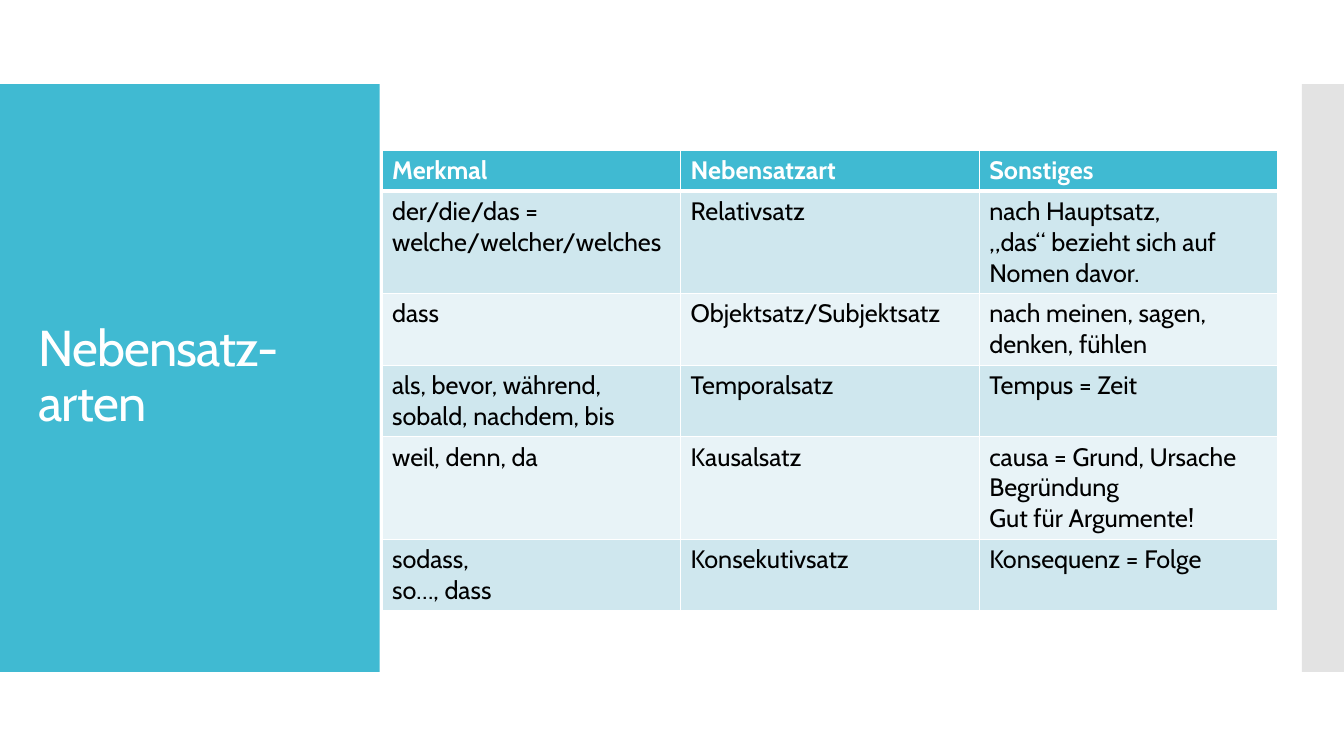
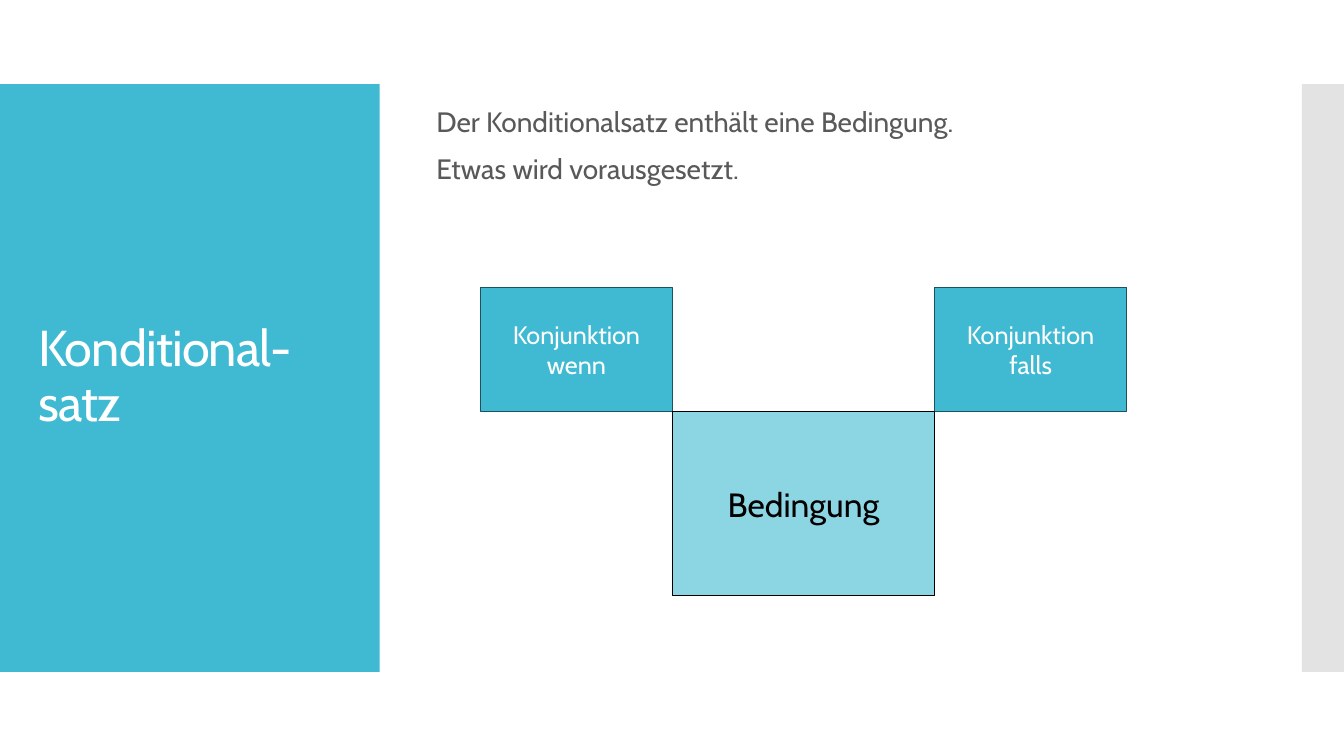
"""Build two German grammar slides: a table of clause types and a diagram of the conditional clause."""
from dataclasses import dataclass

from lxml import etree
from pptx import Presentation
from pptx.dml.color import RGBColor
from pptx.enum.shapes import MSO_SHAPE
from pptx.enum.text import MSO_ANCHOR, MSO_AUTO_SIZE, PP_ALIGN
from pptx.oxml.ns import qn
from pptx.util import Pt

RECT = MSO_SHAPE.RECTANGLE
MIDDLE, TOP = MSO_ANCHOR.MIDDLE, MSO_ANCHOR.TOP
NO_FIT = MSO_AUTO_SIZE.NONE
LEFT, CENTER = PP_ALIGN.LEFT, PP_ALIGN.CENTER

CLAUSE_TITLE = "Nebensatz-arten"
CLAUSE_ROWS = [
    ("Merkmal", "Nebensatzart", "Sonstiges"),
    ("der/die/das = welche/welcher/welches", "Relativsatz",
     "nach Hauptsatz,\n„das“ bezieht sich auf Nomen davor."),
    ("dass", "Objektsatz/Subjektsatz", "nach meinen, sagen, denken, fühlen"),
    ("als, bevor, während, sobald, nachdem, bis", "Temporalsatz", "Tempus = Zeit"),
    ("weil, denn, da", "Kausalsatz", "causa = Grund, Ursache\nBegründung\nGut für Argumente!"),
    ("sodass,\nso…, dass", "Konsekutivsatz", "Konsequenz = Folge"),
]
CONDITION_TITLE = "Konditional-satz"
CONDITION_INTRO = "Der Konditionalsatz enthält eine Bedingung.\nEtwas wird vorausgesetzt."
CONJUNCTIONS = ["Konjunktion\nwenn", "Konjunktion\nfalls"]
CONDITION = "Bedingung"


@dataclass(frozen=True)
class Theme:
    """Colours, font and type sizes of the deck."""
    font: str = "Cabin"
    accent: str = "40BAD2"
    accent_light: str = "8CD6E4"
    accent_dark: str = "1C525C"
    edge: str = "C8C8C8"
    band_odd: str = "CFE7EE"
    band_even: str = "E8F3F7"
    white: str = "FFFFFF"
    black: str = "000000"
    grey: str = "595959"
    title: int = 36
    condition: int = 24
    body: int = 20
    label: int = 18


T = Theme()
WIDTH, HEIGHT = 960, 540
BAND_TOP, BAND_HEIGHT = 60, 420
PANEL_WIDTH, EDGE_WIDTH = 271.2, 30
TITLE_BOX = (20.2, 88.6, 231.8, 362.2)
INTRO_BOX = (304.6, 60.5, 576, 88.6)
TABLE_LEFT, TABLE_TOP, COLUMN_WIDTH, ROW_HEIGHT = 272.9, 107.3, 213.3, 29.2
CONDITION_BOX = (480.2, 293.8, 187.6, 131.8)
CONJUNCTION_SIZE = (136.8, 88.6)


def rgb(color):
    """Turn a hex string into a colour."""
    return RGBColor.from_string(color)


def points(values):
    """Turn numbers into lengths."""
    return [Pt(v) for v in values]


def write(tf, text, size, color, bold=False, align=LEFT, anchor=MIDDLE, **spacing):
    """Fill a text frame and format all its paragraphs."""
    tf.text = text
    tf.word_wrap = True
    tf.vertical_anchor = anchor
    for i, p in enumerate(tf.paragraphs):
        p.alignment = align
        for name, value in spacing.items():
            if name != "space_before" or i:
                setattr(p, name, value)
        for r in p.runs:
            for name, value in {"name": T.font, "size": Pt(size), "bold": bold}.items():
                setattr(r.font, name, value)
            r.font.color.rgb = rgb(color)


def add_rect(s, box, fill, line=None):
    """Add a flat rectangle."""
    sp = s.shapes.add_shape(RECT, *points(box))
    sp.shadow.inherit = False
    sp.fill.solid()
    sp.fill.fore_color.rgb = rgb(fill)
    if line:
        sp.line.color.rgb = rgb(line)
        sp.line.width = Pt(0.85)
    else:
        sp.line.fill.background()
    return sp


def add_bands(layout, s):
    """Draw the two side bands and move them to the layout behind its placeholders."""
    panel = add_rect(s, (0, BAND_TOP, PANEL_WIDTH, BAND_HEIGHT), T.accent)
    edge = add_rect(s, (WIDTH - EDGE_WIDTH, BAND_TOP, EDGE_WIDTH, BAND_HEIGHT), T.edge)
    color = next(edge.element.iter(qn("a:srgbClr")))
    etree.SubElement(color, qn("a:alpha"), val="50000")
    for sp in (edge, panel):
        layout.shapes.element.insert(2, sp.element)


def add_slide(prs, layout, title):
    """Add a slide with its title on the left panel."""
    s = prs.slides.add_slide(layout)
    sp = s.shapes.title
    sp.left, sp.top, sp.width, sp.height = points(TITLE_BOX)
    tf = sp.text_frame
    write(tf, title, T.title, T.white, line_spacing=0.9)
    tf.auto_size = NO_FIT
    tf.paragraphs[0].runs[0].font._element.set("spc", "-60")
    return s


def set_borders(cell, widths):
    """Give a cell white borders, with widths by side."""
    tc_pr = cell._tc.get_or_add_tcPr()
    for side, width in widths.items():
        ln = etree.SubElement(tc_pr, qn(f"a:ln{side}"), w=str(Pt(width)))
        fill = etree.SubElement(ln, qn("a:solidFill"))
        etree.SubElement(fill, qn("a:srgbClr"), val=T.white)


def add_clause_table(s):
    """Add the table of clause types."""
    rows, cols = len(CLAUSE_ROWS), len(CLAUSE_ROWS[0])
    box = (TABLE_LEFT, TABLE_TOP, cols * COLUMN_WIDTH, rows * ROW_HEIGHT)
    table = s.shapes.add_table(rows, cols, *points(box)).table
    for i, row in enumerate(CLAUSE_ROWS):
        header = i == 0
        fill = T.accent if header else T.band_odd if i % 2 else T.band_even
        for j, text in enumerate(row):
            cell = table.cell(i, j)
            write(cell.text_frame, text, T.label, T.white if header else T.black,
                  bold=header, anchor=TOP)
            set_borders(cell, {"L": 1, "R": 1, "T": 3 if i == 1 else 1, "B": 3 if header else 1})
            cell.fill.solid()
            cell.fill.fore_color.rgb = rgb(fill)


def add_condition_diagram(s):
    """Add the condition with a conjunction at each upper corner."""
    left, top, width, _ = CONDITION_BOX
    w, h = CONJUNCTION_SIZE
    for x, text in zip((left - w, left + width), CONJUNCTIONS):
        sp = add_rect(s, (x, top - h, w, h), T.accent, T.accent_dark)
        write(sp.text_frame, text, T.label, T.white, align=CENTER)
    sp = add_rect(s, CONDITION_BOX, T.accent_light, T.black)
    write(sp.text_frame, CONDITION, T.condition, T.black, align=CENTER)


def main():
    """Build and save the deck."""
    prs = Presentation()
    prs.slide_width, prs.slide_height = points((WIDTH, HEIGHT))
    layout = prs.slide_layouts[5]

    s = add_slide(prs, layout, CLAUSE_TITLE)
    add_bands(layout, s)
    add_clause_table(s)

    s = add_slide(prs, layout, CONDITION_TITLE)
    sp = s.shapes.add_textbox(*points(INTRO_BOX))
    write(sp.text_frame, CONDITION_INTRO, T.body, T.grey, line_spacing=0.9, space_before=Pt(12))
    add_condition_diagram(s)

    prs.save("out.pptx")


if __name__ == "__main__":
    main()
